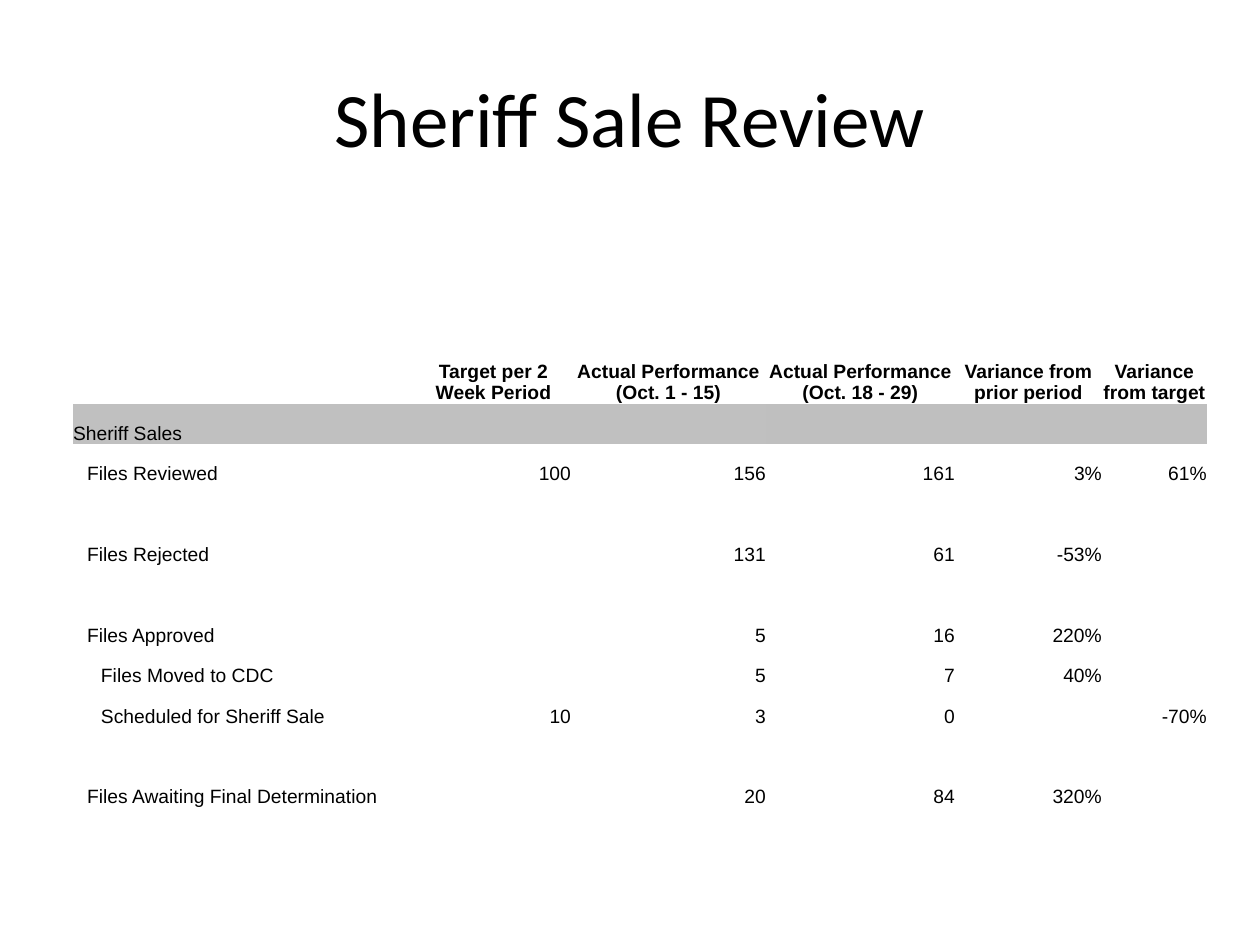
"""Build the Sheriff Sale Review slide."""
from pptx import Presentation
from pptx import util as u
from pptx.dml.color import RGBColor
from pptx.enum import text

PX = u.Inches(1) / 126
NO_GRID_STYLE = "{2D5ABB26-0587-4C30-8999-92F81FD0307C}"
COLUMN_WIDTHS = [343, 155, 195, 189, 147, 105]
HEADER_HEIGHT = 111
BODY_HEIGHT = 404
INDENT = 14
HEADERS = [
    "",
    "Target per 2 Week Period",
    "Actual Performance (Oct. 1 - 15)",
    "Actual Performance (Oct. 18 - 29)",
    "Variance from prior period",
    "Variance from target",
]
SECTION = "Sheriff Sales"
SECTION_FILLS = ["C0C0C0"] * 3 + ["BFBFBF"] * 3
BODY = [
    (1, ["Files Reviewed", "100", "156", "161", "3%", "61%"]),
    (0, [""] * 6),
    (1, ["Files Rejected", "", "131", "61", "-53%", ""]),
    (0, [""] * 6),
    (1, ["Files Approved", "", "5", "16", "220%", ""]),
    (2, ["Files Moved to CDC", "", "5", "7", "40%", ""]),
    (2, ["Scheduled for Sheriff Sale", "10", "3", "0", "", "-70%"]),
    (0, [""] * 6),
    (1, ["Files Awaiting Final Determination", "", "20", "84", "320%", ""]),
]


def px(length):
    """Turn pixels into EMU."""
    return u.Emu(round(length * PX))


def colour(code):
    """Turn a hex string into a colour."""
    return RGBColor.from_string(code)


def add_span(para, words, font, size, bold=False):
    """Add one formatted run to a paragraph."""
    span = para.add_run()
    span.text = words
    span.font.name = font
    span.font.size = u.Pt(size)
    span.font.bold = bold
    span.font.color.rgb = colour("000000")


def add_title(page, words):
    """Place and format the title placeholder."""
    box = page.shapes.title
    box.left, box.top, box.width, box.height = map(px, (63, 38, 1134, 158))
    box.text_frame.vertical_anchor = text.MSO_ANCHOR.MIDDLE
    para = box.text_frame.paragraphs[0]
    para.alignment = text.PP_ALIGN.CENTER
    add_span(para, words, "Calibri", 44)


def fill_cell(cell, words, align, indent=0, bold=False, fill=None):
    """Format one table cell and write its words."""
    cell.margin_left = px(indent)
    cell.margin_top = cell.margin_right = cell.margin_bottom = 0
    cell.vertical_anchor = text.MSO_ANCHOR.BOTTOM
    if fill:
        cell.fill.solid()
        cell.fill.fore_color.rgb = colour(fill)
    else:
        cell.fill.background()
    para = cell.text_frame.paragraphs[0]
    para.alignment = align
    if words:
        add_span(para, words, "Arial", 11, bold)


def add_grid(page):
    """Add the plain table with its column widths and row heights."""
    frame = page.shapes.add_table(
        len(BODY) + 2, len(COLUMN_WIDTHS), px(73), px(293),
        px(sum(COLUMN_WIDTHS)), px(HEADER_HEIGHT + BODY_HEIGHT))
    table = frame.table
    table.first_row = table.horz_banding = False
    table._tbl.tblPr[0].text = NO_GRID_STYLE
    for column, width in zip(table.columns, COLUMN_WIDTHS):
        column.width = px(width)
    for row in table.rows:
        row.height = px(BODY_HEIGHT / (len(BODY) + 1))
    table.rows[0].height = px(HEADER_HEIGHT)
    return table


def add_review_table(page):
    """Fill the table with headers, section band and figures."""
    left, centre, right = (
        text.PP_ALIGN.LEFT, text.PP_ALIGN.CENTER, text.PP_ALIGN.RIGHT)
    table = add_grid(page)
    for column, words in enumerate(HEADERS):
        fill_cell(table.cell(0, column), words, centre, bold=True)
    for column, fill in enumerate(SECTION_FILLS):
        words = "" if column else SECTION
        fill_cell(table.cell(1, column), words, left, fill=fill)
    for row, (level, values) in enumerate(BODY, start=2):
        for column, words in enumerate(values):
            align, indent = (right, 0) if column else (left, level * INDENT)
            fill_cell(table.cell(row, column), words, align, indent)


def main():
    """Build and save the deck."""
    deck = Presentation()
    deck.slide_width, deck.slide_height = px(1260), px(945)
    page = deck.slides.add_slide(deck.slide_layouts[5])
    add_title(page, "Sheriff Sale Review")
    add_review_table(page)
    deck.save("out.pptx")


if __name__ == "__main__":
    main()
